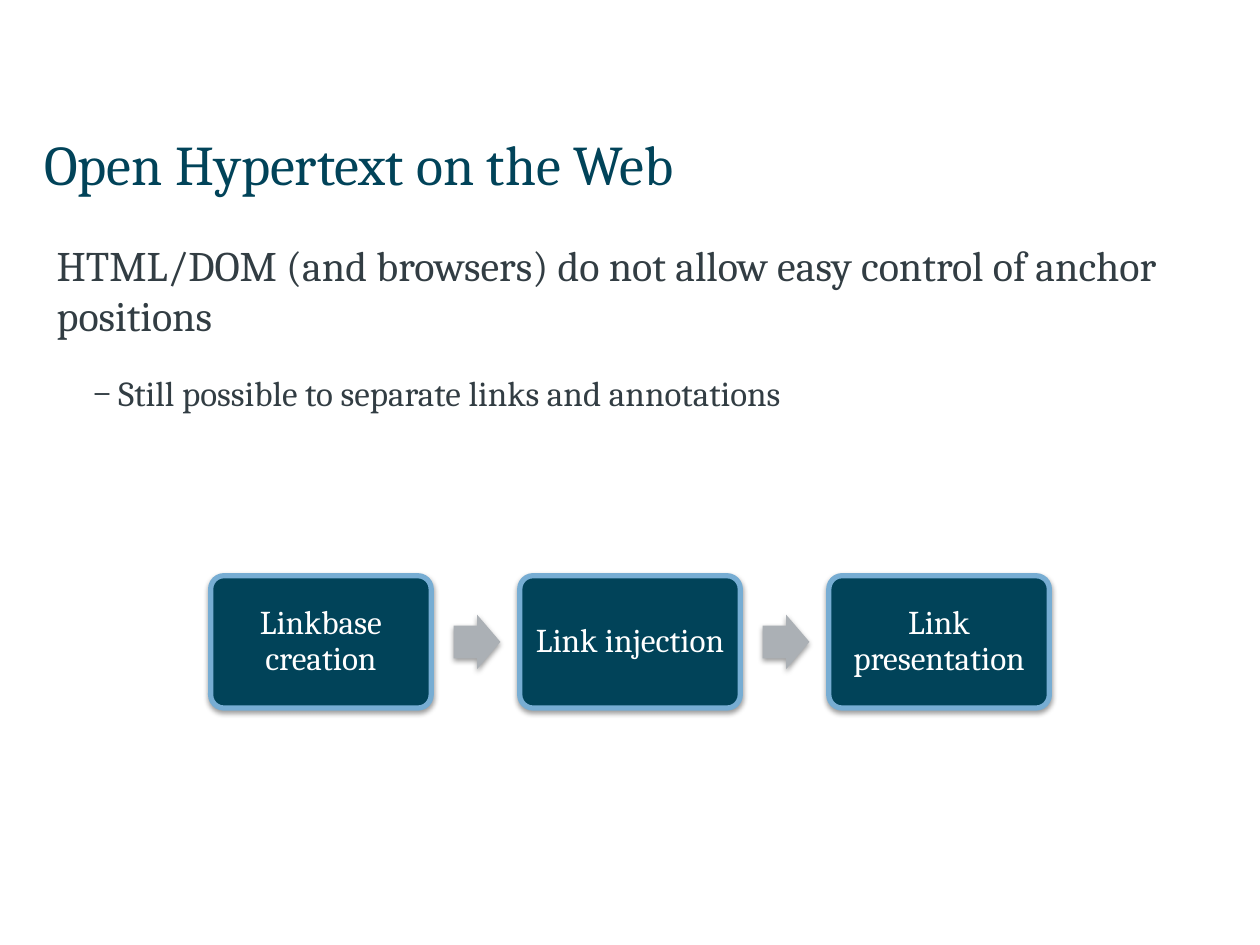
import lxml.etree
import pptx
import pptx.dml.color
import pptx.enum.shapes
import pptx.enum.text
import pptx.oxml.ns
import pptx.util

Pt = pptx.util.Pt
RGBColor = pptx.dml.color.RGBColor
SHAPE = pptx.enum.shapes.MSO_SHAPE
ALIGN = pptx.enum.text.PP_ALIGN
ANCHOR = pptx.enum.text.MSO_ANCHOR
qn = pptx.oxml.ns.qn

PETROL = RGBColor(0x01, 0x43, 0x59)
SLATE = RGBColor(0x32, 0x3D, 0x43)
SKY = RGBColor(0x77, 0xAD, 0xD3)
GREY = RGBColor(0xAB, 0xB0, 0xB5)
WHITE = RGBColor(0xFF, 0xFF, 0xFF)


class SlideBuilder:
    font_name = "Cambria"

    def __init__(self, slide):
        self.slide = slide

    def format_font(self, paragraph, size, color):
        for run in paragraph.runs:
            run.font.name = self.font_name
            run.font.size = Pt(size)
            run.font.color.rgb = color

    def text_area(self, left, top, width, height):
        area = self.slide.shapes.add_textbox(Pt(left), Pt(top), Pt(width), Pt(height))
        frame = area.text_frame
        frame.word_wrap = True
        frame.margin_left = 0
        return frame

    def fill_paragraph(self, paragraph, text, size, color, after=0, margin=0, indent=0, bullet=None):
        paragraph.text = text
        paragraph.space_after = Pt(after)
        properties = paragraph._p.get_or_add_pPr()
        properties.set("marL", str(Pt(margin)))
        properties.set("indent", str(Pt(indent)))
        if bullet:
            lxml.etree.SubElement(properties, qn("a:buFont"), typeface=self.font_name)
            lxml.etree.SubElement(properties, qn("a:buChar"), char=bullet)
        self.format_font(paragraph, size, color)

    def raised_shape(self, kind, left, top, width, height, fill, adjustments):
        shape = self.slide.shapes.add_shape(kind, Pt(left), Pt(top), Pt(width), Pt(height))
        for index, value in enumerate(adjustments):
            shape.adjustments[index] = value
        shape.fill.solid()
        shape.fill.fore_color.rgb = fill
        shape.line.fill.background()
        shape.shadow.inherit = False
        effects = shape._element.spPr.find(qn("a:effectLst"))
        shadow = lxml.etree.SubElement(
            effects, qn("a:outerShdw"), blurRad=str(Pt(3.1)), dist=str(Pt(1.6)),
            dir="5400000", rotWithShape="0")
        shade = lxml.etree.SubElement(shadow, qn("a:srgbClr"), val="000000")
        lxml.etree.SubElement(shade, qn("a:alpha"), val="38000")
        return shape

    def step(self, label, left, top, width, height):
        box = self.raised_shape(SHAPE.ROUNDED_RECTANGLE, left, top, width, height, PETROL, [0.1])
        box.line.color.rgb = SKY
        box.line.width = Pt(3)
        frame = box.text_frame
        frame.word_wrap = True
        frame.vertical_anchor = ANCHOR.MIDDLE
        frame.margin_left = frame.margin_right = Pt(5.7)
        frame.margin_top = frame.margin_bottom = Pt(5.7)
        frame.text = label
        paragraph = frame.paragraphs[0]
        paragraph.alignment = ALIGN.CENTER
        paragraph.line_spacing = 0.9
        self.format_font(paragraph, 19, WHITE)

    def arrow(self, left, top, width, height):
        self.raised_shape(SHAPE.RIGHT_ARROW, left, top, width, height, GREY, [0.6, 0.5])


def main():
    presentation = pptx.Presentation()
    presentation.slide_width = Pt(720)
    presentation.slide_height = Pt(540)
    builder = SlideBuilder(presentation.slides.add_slide(presentation.slide_layouts[6]))

    title = builder.text_area(25.2, 70.6, 669, 51)
    builder.fill_paragraph(title.paragraphs[0], "Open Hypertext on the Web", 32, PETROL)

    body = builder.text_area(25.2, 133.2, 669, 119.5)
    builder.fill_paragraph(
        body.paragraphs[0],
        "HTML/DOM (and browsers) do not allow easy control of anchor positions",
        24, SLATE, after=18, margin=7.2)
    builder.fill_paragraph(
        body.add_paragraph(), "Still possible to separate links and annotations",
        20, SLATE, after=12, margin=42.5, indent=-14.4, bullet="–")

    steps = ["Linkbase creation", "Link injection", "Link presentation"]
    first_left, top, width, height, pitch = 120.4, 329, 126, 75.6, 176.6
    arrow_width, arrow_height = 26.7, 31.2
    for index, label in enumerate(steps):
        left = first_left + index * pitch
        builder.step(label, left, top, width, height)
        if index < len(steps) - 1:
            gap = pitch - width
            builder.arrow(
                left + width + (gap - arrow_width) / 2 + 0.9,
                top + (height - arrow_height) / 2, arrow_width, arrow_height)

    presentation.save("out.pptx")


if __name__ == "__main__":
    main()
